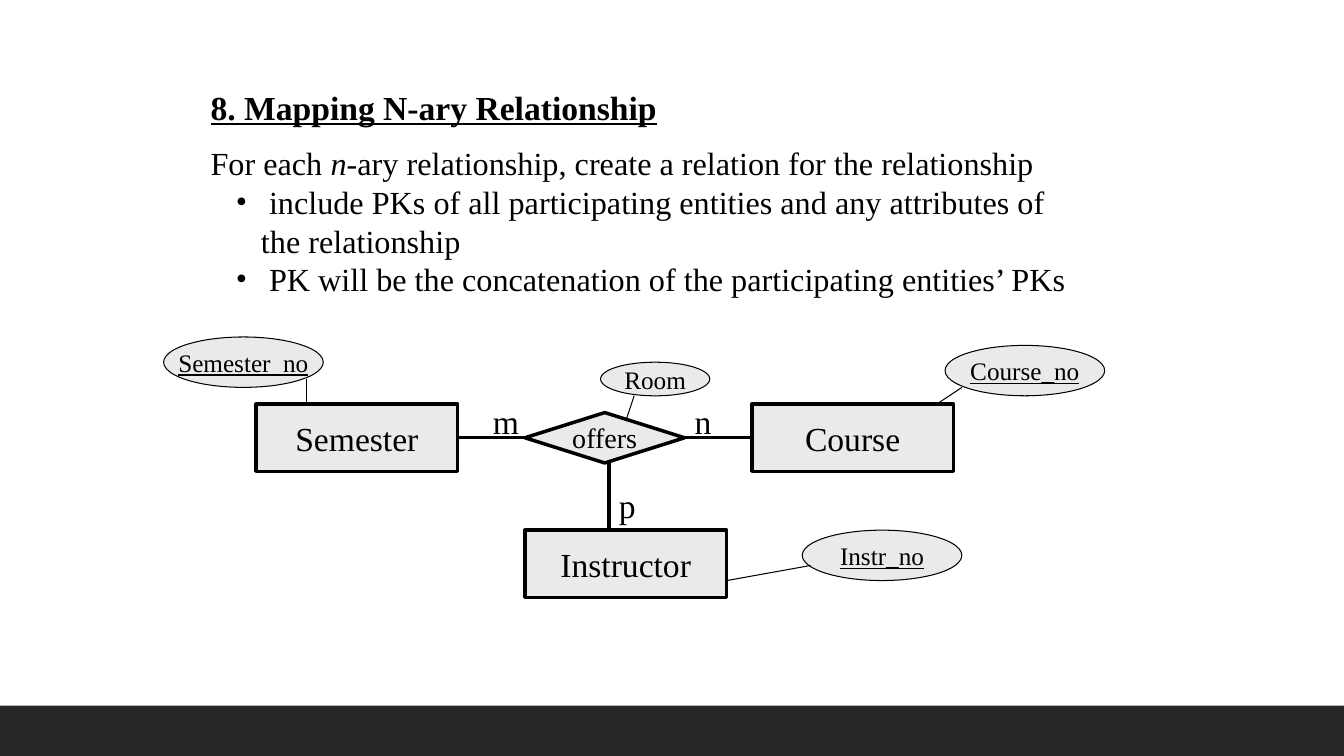
import pptx
import pptx.dml.color
import pptx.enum.shapes
import pptx.enum.text
import pptx.oxml.ns
import pptx.util
from lxml import etree

Pt = pptx.util.Pt
Inches = pptx.util.Inches
RGBColor = pptx.dml.color.RGBColor
MSO_SHAPE = pptx.enum.shapes.MSO_SHAPE
qn = pptx.oxml.ns.qn

BLACK = RGBColor(0x00, 0x00, 0x00)
GREY = RGBColor(0xEA, 0xEA, 0xEA)
DARK = RGBColor(0x26, 0x26, 0x26)
FONT = "Times New Roman"

# Diagram grid: twelve cells to the inch, with a small margin
CELL = 1 / 12
LEFT, TOP = 0.04, 0.01
ENTITY = (24, 8)
RELATION = (19, 6)
KEY = (19, 6)
ATTRIBUTE = (13, 4)
LABEL = (6, 6)
THICK, LINK, THIN = 2.5, 2.25, 0.75


def at(col, row):
    return Inches(LEFT + col * CELL), Inches(TOP + row * CELL)


def extent(size):
    return [Inches(n * CELL) for n in size]


def add_run(p, text, size, bold=False, italic=False, underline=False):
    r = p.add_run()
    r.text = text
    r.font.name = FONT
    r.font.size = Pt(size)
    r.font.color.rgb = BLACK
    r.font.bold = bold
    r.font.italic = italic
    r.font.underline = underline


def add_node(slide, kind, col, row, size, text, pt, weight, underline=False):
    sp = slide.shapes.add_shape(kind, *at(col, row), *extent(size))
    sp.shadow.inherit = False
    sp.fill.solid()
    sp.fill.fore_color.rgb = GREY
    sp.line.color.rgb = BLACK
    sp.line.width = Pt(weight)
    tf = sp.text_frame
    tf.word_wrap = False
    tf.vertical_anchor = pptx.enum.text.MSO_ANCHOR.MIDDLE
    p = tf.paragraphs[0]
    p.alignment = pptx.enum.text.PP_ALIGN.CENTER
    add_run(p, text, pt, underline=underline)


def add_link(slide, start, end, weight):
    line = slide.shapes.add_connector(
        pptx.enum.shapes.MSO_CONNECTOR.STRAIGHT, *at(*start), *at(*end))
    line.line.color.rgb = BLACK
    line.line.width = Pt(weight)
    etree.SubElement(line._element.spPr, qn("a:effectLst"))


def add_label(slide, col, row, text):
    sp = slide.shapes.add_textbox(*at(col, row), *extent(LABEL))
    sp.text_frame.word_wrap = True
    add_run(sp.text_frame.paragraphs[0], text, 24)


def add_bullet(tf, text):
    p = tf.add_paragraph()
    p.level = 1
    p.line_spacing = Pt(27.6)
    pPr = p._p.get_or_add_pPr()
    pPr.set("marL", str(Inches(0.5)))
    pPr.set("indent", str(-Inches(0.25)))
    etree.SubElement(pPr, qn("a:buFont")).set("typeface", FONT)
    etree.SubElement(pPr, qn("a:buChar")).set("char", "•")
    add_run(p, text, 23)


def add_rules(slide):
    sp = slide.shapes.add_textbox(
        Inches(1.99), Inches(0.81), Inches(8.83), Inches(2.25))
    tf = sp.text_frame
    tf.word_wrap = True
    add_run(tf.paragraphs[0], "8. Mapping N-ary Relationship", 24,
            bold=True, underline=True)
    p = tf.add_paragraph()
    p.space_before = Pt(12)
    p.line_spacing = Pt(27.6)
    add_run(p, "For each ", 23)
    add_run(p, "n", 23, italic=True)
    add_run(p, "-ary relationship, create a relation for the relationship", 23)
    add_bullet(tf, " include PKs of all participating entities and any "
                   "attributes of the relationship")
    add_bullet(tf, " PK will be the concatenation of the participating "
                   "entities’ PKs")


def add_footer(prs, slide):
    height = prs.slide_height // 15
    sp = slide.shapes.add_shape(MSO_SHAPE.RECTANGLE, 0,
                                prs.slide_height - height,
                                prs.slide_width, height)
    sp.shadow.inherit = False
    sp.fill.solid()
    sp.fill.fore_color.rgb = DARK
    sp.line.fill.background()


def main():
    prs = pptx.Presentation()
    prs.slide_width, prs.slide_height = Inches(13.33), Inches(7.5)
    slide = prs.slides.add_slide(prs.slide_layouts[6])
    add_footer(prs, slide)
    add_rules(slide)

    # Relationship links, behind the nodes
    add_link(slide, (54, 52), (89, 52), LINK)
    add_link(slide, (72, 55), (72, 63), LINK)

    # Entities and their relationship
    for col, row, name in [(30, 48, "Semester"), (89, 48, "Course"),
                           (62, 63, "Instructor")]:
        add_node(slide, MSO_SHAPE.RECTANGLE, col, row, ENTITY, name, 24, THICK)
    add_node(slide, MSO_SHAPE.DIAMOND, 62, 49, RELATION, "offers", 20, THICK)

    # Attributes: keys are underlined
    add_node(slide, MSO_SHAPE.OVAL, 71, 43, ATTRIBUTE, "Room", 18, THIN)
    for col, row, name in [(19, 40, "Semester_no"), (112, 41, "Course_no"),
                           (95, 63, "Instr_no")]:
        add_node(slide, MSO_SHAPE.OVAL, col, row, KEY, name, 18, THIN,
                 underline=True)
    for start, end in [((75, 47), (74, 50)), ((114, 46), (111, 48)),
                       ((36, 45), (36, 48)), ((86, 69), (96, 67.2))]:
        add_link(slide, start, end, THIN)

    # Cardinalities
    for col, row, text in [(57, 47, "m"), (81, 47, "n"), (72, 57, "p")]:
        add_label(slide, col, row, text)

    prs.save("out.pptx")


if __name__ == "__main__":
    main()
